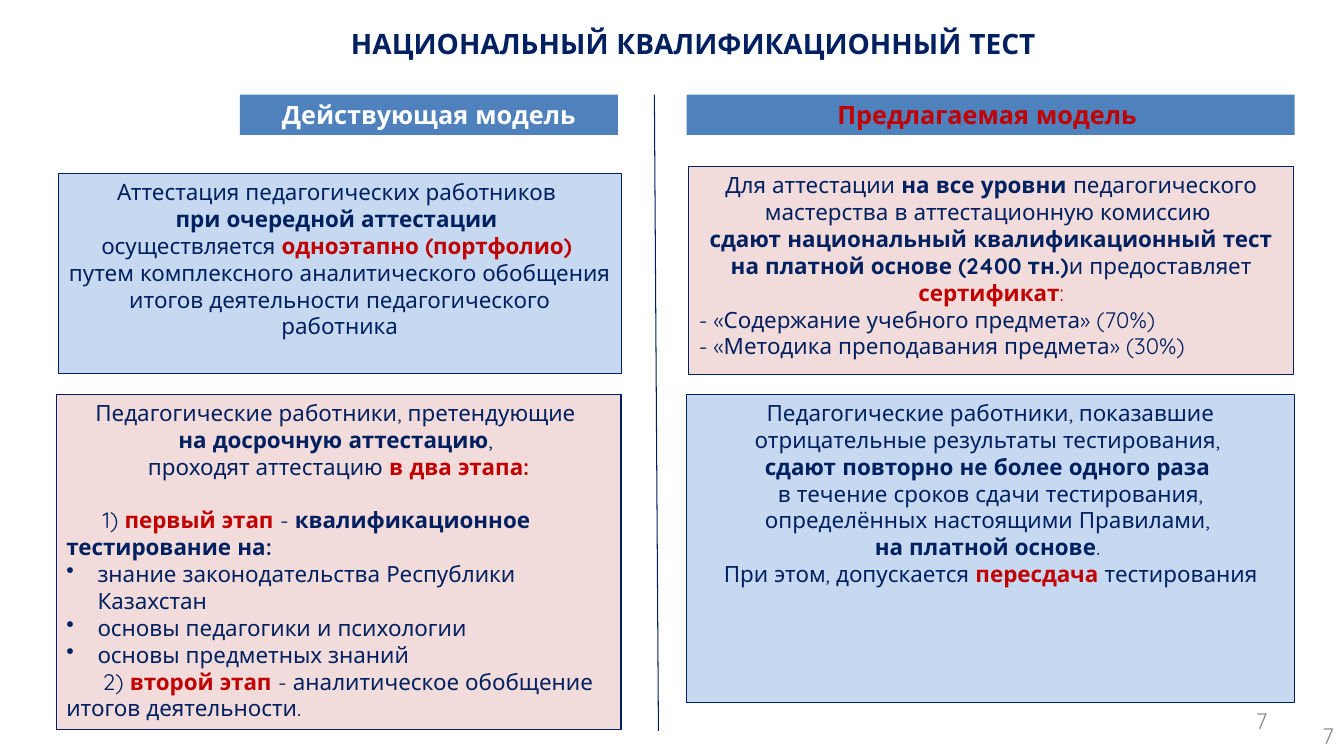
import pptx
import pptx.util
import pptx.dml.color
import pptx.enum.shapes
import pptx.enum.text
import lxml.etree

RGBColor = pptx.dml.color.RGBColor
NAVY = RGBColor(0x00, 0x20, 0x60)
RED = RGBColor(0xC0, 0x00, 0x00)
WHITE = RGBColor(0xFF, 0xFF, 0xFF)
GREY = RGBColor(0x8C, 0x8C, 0x8C)
BLUE = RGBColor(0x4F, 0x81, 0xBD)
PALE_BLUE = RGBColor(0xC6, 0xD9, 0xF1)
PALE_RED = RGBColor(0xF2, 0xDC, 0xDB)

CENTER = pptx.enum.text.PP_ALIGN.CENTER
LEFT = pptx.enum.text.PP_ALIGN.LEFT
RIGHT = pptx.enum.text.PP_ALIGN.RIGHT
TOP = pptx.enum.text.MSO_ANCHOR.TOP
MIDDLE = pptx.enum.text.MSO_ANCHOR.MIDDLE

PLAIN = (NAVY, False)
BOLD = (NAVY, True)
ACCENT = (RED, True)

CENTERED = {"align": CENTER}
FLUSH = {"align": LEFT}
STAGE = {"align": LEFT, "indent": 0.36}
FIRST_STAGE = {**STAGE, "before": 19.2}
BULLET = {"align": LEFT, "margin": 0.31, "indent": -0.31, "bullet": "•"}

deck = pptx.Presentation()
deck.slide_width = pptx.util.Inches(13.33)
deck.slide_height = pptx.util.Inches(7.5)
page = deck.slides.add_slide(deck.slide_layouts[1])
column = deck.slide_width / 100
row = deck.slide_height / 100


def place(box, left, top, width, height):
    lengths = {"left": left * column, "top": top * row,
               "width": width * column, "height": height * row}
    for name, value in lengths.items():
        setattr(box, name, round(value))


def write(box, paragraphs, size=16, anchor=TOP):
    frame = box.text_frame
    frame_format = {"word_wrap": True, "vertical_anchor": anchor,
                    "auto_size": pptx.enum.text.MSO_AUTO_SIZE.NONE}
    for name, value in frame_format.items():
        setattr(frame, name, value)
    for number, (layout, spans) in enumerate(paragraphs):
        para = frame.add_paragraph() if number else frame.paragraphs[0]
        para.alignment = layout["align"]
        para.space_before = pptx.util.Pt(layout.get("before", 0))
        properties = para._p.get_or_add_pPr()
        for name, key in (("marL", "margin"), ("indent", "indent")):
            properties.set(name, str(pptx.util.Inches(layout.get(key, 0))))
        kind = "a:buChar" if "bullet" in layout else "a:buNone"
        mark = lxml.etree.SubElement(properties, pptx.oxml.ns.qn(kind))
        if "bullet" in layout:
            mark.set("char", layout["bullet"])
        for text, (color, bold) in spans:
            span = para.add_run()
            span.text = text
            font_format = {"name": "Quicksand", "size": pptx.util.Pt(size), "bold": bold}
            for name, value in font_format.items():
                setattr(span.font, name, value)
            span.font.color.rgb = color


title = page.shapes.title
place(title, 14.93, 1.6, 73.29, 8.13)
write(title, [(CENTERED, [("НАЦИОНАЛЬНЫЙ КВАЛИФИКАЦИОННЫЙ ТЕСТ", BOLD)])], 20, MIDDLE)

proposed_rules = [
    (CENTERED, [("Для аттестации ", PLAIN), ("на все уровни ", BOLD),
                ("педагогического мастерства в аттестационную комиссию ", PLAIN)]),
    (CENTERED, [("сдают национальный квалификационный тест на платной основе (2400 тн.)", BOLD),
                ("и предоставляет ", PLAIN), ("сертификат", ACCENT), (":", (RED, False))]),
    (FLUSH, [("- «Содержание учебного предмета» (70%)", PLAIN)]),
    (FLUSH, [("- «Методика преподавания предмета» (30%)", PLAIN)]),
]
retake_rules = [
    (CENTERED, [("Педагогические работники, показавшие отрицательные результаты тестирования, ", PLAIN)]),
    (CENTERED, [("сдают повторно не более одного раза ", BOLD)]),
    (CENTERED, [("в течение сроков сдачи тестирования, определённых настоящими Правилами, ", PLAIN)]),
    (CENTERED, [("на платной основе", BOLD), (". ", PLAIN)]),
    (CENTERED, [("При этом, допускается ", PLAIN), ("пересдача ", ACCENT), ("тестирования", PLAIN)]),
]
current_rules = [
    (CENTERED, [("Аттестация педагогических работников ", PLAIN)]),
    (CENTERED, [("при очередной аттестации ", BOLD)]),
    (CENTERED, [("осуществляется ", PLAIN), ("одноэтапно (портфолио) ", ACCENT)]),
    (CENTERED, [("путем комплексного аналитического обобщения итогов деятельности "
                 "педагогического работника", PLAIN)]),
]
early_rules = [
    (CENTERED, [("Педагогические работники, претендующие ", PLAIN)]),
    (CENTERED, [("на досрочную аттестацию", BOLD), (", ", PLAIN)]),
    (CENTERED, [("проходят аттестацию ", PLAIN), ("в два этапа:", ACCENT)]),
    (FIRST_STAGE, [("1) ", PLAIN), ("первый этап ", ACCENT), ("- ", PLAIN),
                   ("квалификационное тестирование на:", BOLD)]),
    (BULLET, [("знание законодательства Республики Казахстан", PLAIN)]),
    (BULLET, [("основы педагогики и психологии", PLAIN)]),
    (BULLET, [("основы предметных знаний", PLAIN)]),
    (STAGE, [("2) ", PLAIN), ("второй этап ", ACCENT),
             ("- аналитическое обобщение итогов деятельности.", PLAIN)]),
]

divider = page.shapes.add_connector(
    pptx.enum.shapes.MSO_CONNECTOR.STRAIGHT, round(48.69 * column), round(12.53 * row),
    round(48.99 * column), round(96.67 * row))
divider.line.color.rgb = NAVY
divider.line.width = pptx.util.Pt(0.75)
lxml.etree.SubElement(divider._element.spPr, pptx.oxml.ns.qn("a:effectLst"))

headings = [
    ((17.85, 12.53, 28.13, 5.33), "Действующая модель", WHITE),
    ((51.09, 12.53, 45.24, 5.33), "Предлагаемая модель ", RED),
]
for area, text, color in headings:
    heading = page.shapes.add_shape(pptx.enum.shapes.MSO_SHAPE.RECTANGLE, 0, 0, 0, 0)
    place(heading, *area)
    heading.shadow.inherit = False
    heading.fill.solid()
    heading.fill.fore_color.rgb = BLUE
    heading.line.fill.background()
    write(heading, [(CENTERED, [(text, (color, True))])], 18)

panels = [
    (page.placeholders[1], (51.24, 22, 45.01, 27.6), PALE_RED, proposed_rules),
    (None, (51.09, 52.13, 45.24, 40.8), PALE_BLUE, retake_rules),
    (None, (4.2, 52.13, 42.01, 44.4), PALE_RED, early_rules),
    (None, (4.35, 22.93, 41.86, 26.53), PALE_BLUE, current_rules),
]
for placeholder, area, fill, rules in panels:
    panel = placeholder
    if panel is None:
        panel = page.shapes.add_shape(pptx.enum.shapes.MSO_SHAPE.RECTANGLE, 0, 0, 0, 0)
        panel.shadow.inherit = False
    place(panel, *area)
    panel.fill.solid()
    panel.fill.fore_color.rgb = fill
    panel.line.color.rgb = NAVY
    panel.line.width = pptx.util.Pt(0.75)
    write(panel, rules)

for left, top in ((71.72, 92.67), (76.67, 94.67)):
    page_number = page.shapes.add_textbox(0, 0, 0, 0)
    place(page_number, left, top, 23.33, 5.33)
    write(page_number, [({"align": RIGHT}, [("7", (GREY, False))])], 16, MIDDLE)

deck.save("out.pptx")
